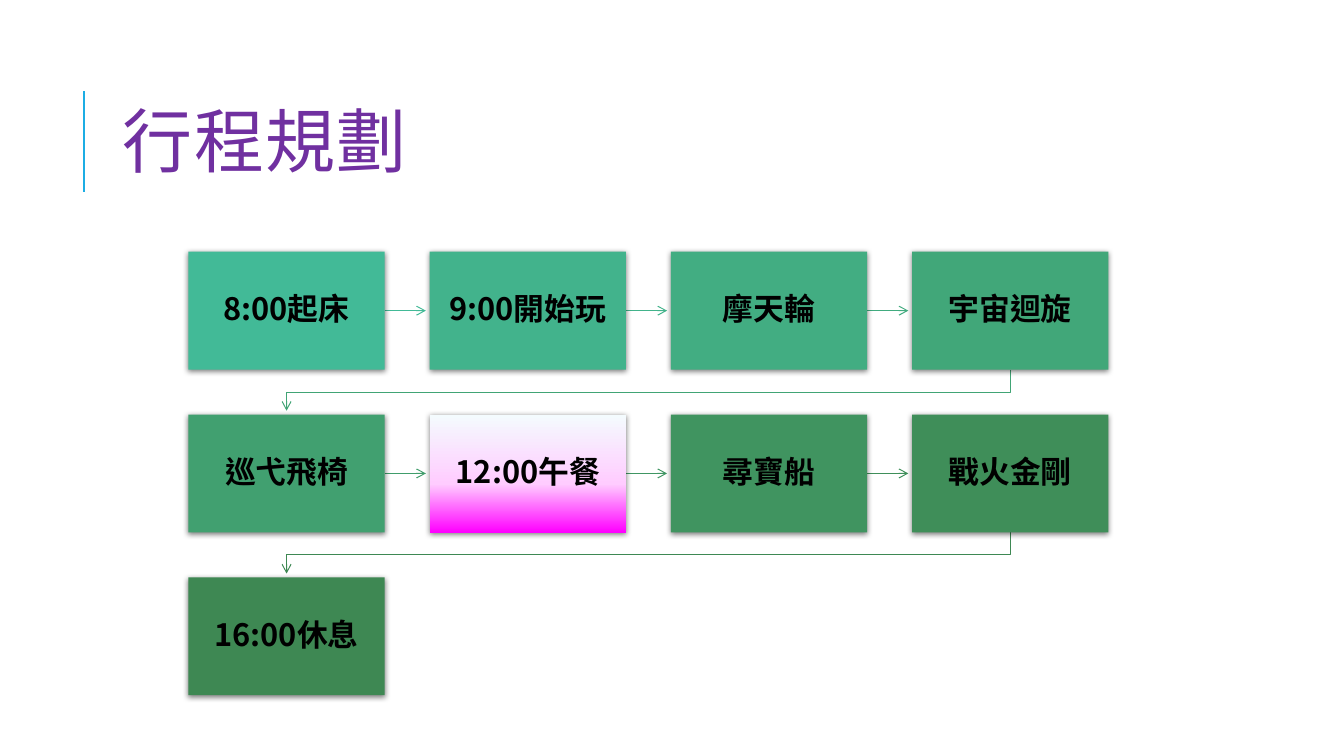
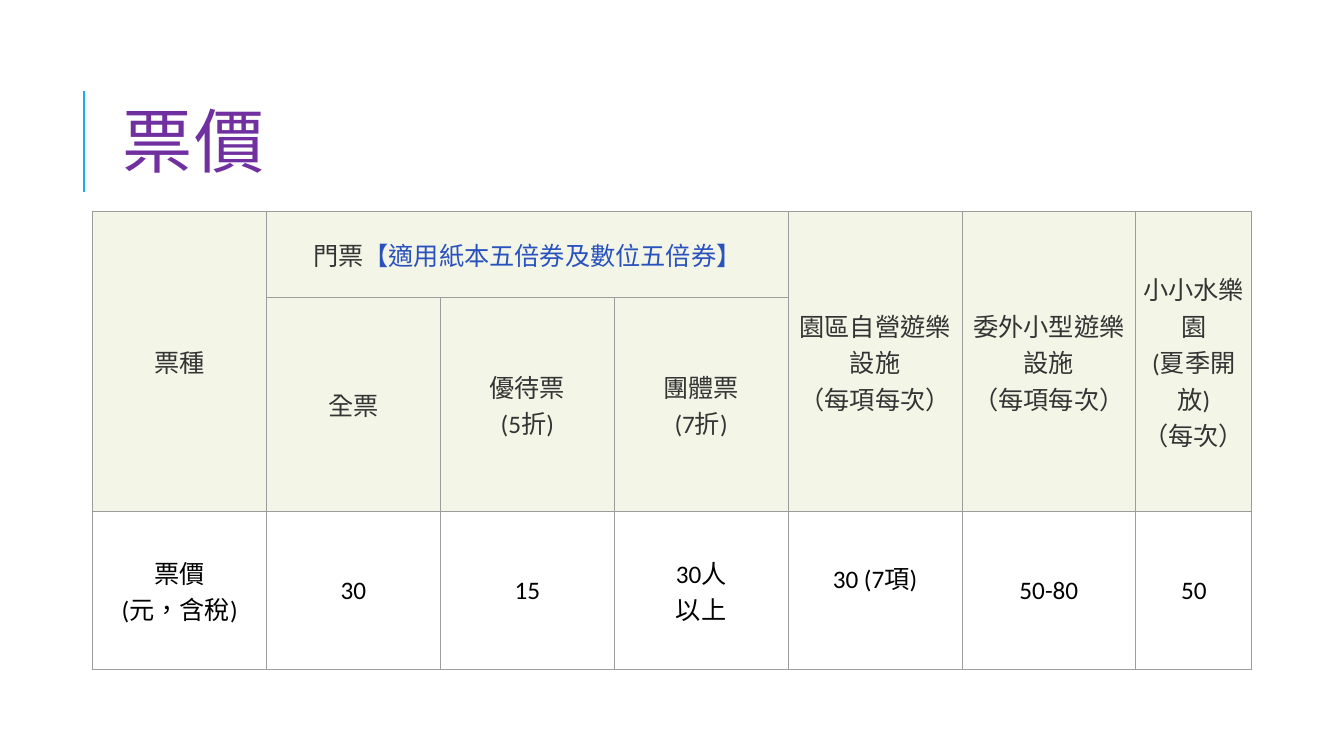
import copy

import pptx
import pptx.dml.color
import pptx.enum.shapes
import pptx.enum.text
import pptx.oxml.ns
import pptx.util
from lxml import etree

Pt = pptx.util.Pt
qn = pptx.oxml.ns.qn
PP_ALIGN = pptx.enum.text.PP_ALIGN
MIDDLE = pptx.enum.text.MSO_ANCHOR.MIDDLE


def rgb(color):
    return pptx.dml.color.RGBColor.from_string(color)


def sub(parent, tag, **attrs):
    """Append a DrawingML child element."""
    return etree.SubElement(parent, qn("a:" + tag), attrs)


class Deck:
    ACCENT, TITLE = "1CADE4", "7030A0"
    BLACK, GREY, BLUE = "000000", "343434", "2A52BE"
    HEAD, BODY, BORDER = "F3F6E7", "FFFFFF", "9C9C9C"
    TITLE_FONT, BOX_FONT, TABLE_FONT = "Cabin", "Noto Sans CJK SC", "Calibri"

    def __init__(self):
        self.prs = pptx.Presentation()
        self.prs.slide_width, self.prs.slide_height = Pt(960), Pt(540)
        self.s = None

    def slide(self, title):
        """Start a slide with the accent rule and its title."""
        self.s = self.prs.slides.add_slide(self.prs.slide_layouts[6])
        self.line((60, 137), (60, 65), self.ACCENT, 1.5)
        sp = self.s.shapes.add_textbox(Pt(80.6), Pt(46), Pt(765.4), Pt(118))
        tf = sp.text_frame
        tf.word_wrap = True
        tf.vertical_anchor = MIDDLE
        p = tf.paragraphs[0]
        p.line_spacing = 0.8
        r = self.run(p, title, 50, self.TITLE_FONT, self.TITLE)
        r._r.get_or_add_rPr().set("spc", "100")

    def run(self, p, text, size, font, color, bold=False):
        r = p.add_run()
        r.text = text
        r.font.size, r.font.name, r.font.bold = Pt(size), font, bold
        r.font.color.rgb = rgb(color)
        r._r.get_or_add_rPr().set("lang", "zh-TW")
        return r

    def line(self, start, end, color, width):
        c = self.s.shapes.add_connector(
            pptx.enum.shapes.MSO_CONNECTOR.STRAIGHT, *map(Pt, start + end))
        c.line.color.rgb, c.line.width = rgb(color), Pt(width)
        sub(c._element.spPr, "effectLst")
        return c

    def arrow(self, points, color):
        """Draw a straight arrow, or a bent one if there are over two points."""
        if len(points) == 2:
            sp = self.line(*points, color, 0.75)
        else:
            start, *rest = [tuple(map(Pt, point)) for point in points]
            fb = self.s.shapes.build_freeform(*start)
            fb.add_line_segments(rest, close=False)
            sp = fb.convert_to_shape()
            sp.fill.background()
            sp.line.color.rgb, sp.line.width = rgb(color), Pt(0.75)
            sp.shadow.inherit = False
        sub(sp._element.spPr.find(qn("a:ln")), "tailEnd", type="arrow")

    def box(self, x, y, w, h, text, fill):
        """Draw a shadowed box; fill is a colour or a list of gradient stops."""
        sp = self.s.shapes.add_shape(
            pptx.enum.shapes.MSO_SHAPE.RECTANGLE, *map(Pt, (x, y, w, h)))
        if isinstance(fill, str):
            sp.fill.solid()
            sp.fill.fore_color.rgb = rgb(fill)
        else:
            self.gradient(sp, fill)
        sp.line.fill.background()
        sp.shadow.inherit = False
        shadow = sub(sp._element.spPr.find(qn("a:effectLst")), "outerShdw",
                     blurRad=str(Pt(4)), dist=str(Pt(1)), dir="5400000",
                     rotWithShape="0")
        sub(sub(shadow, "srgbClr", val=self.BLACK), "alpha", val="50000")
        tf = sp.text_frame
        tf.word_wrap = True
        tf.vertical_anchor = MIDDLE
        tf.margin_left = tf.margin_right = Pt(12)
        tf.margin_top = tf.margin_bottom = Pt(12)
        p = tf.paragraphs[0]
        p.alignment, p.line_spacing = PP_ALIGN.CENTER, 0.9
        r = self.run(p, text, 22, self.BOX_FONT, self.BLACK, bold=True)
        sub(r._r.get_or_add_rPr(), "ea", typeface=self.BOX_FONT)

    def gradient(self, sp, stops):
        sp.fill.gradient()
        sp.fill.gradient_angle = 270
        gs = sp._element.spPr.find(".//" + qn("a:gsLst"))
        while len(gs) < len(stops):
            gs.insert(1, copy.deepcopy(gs[0]))
        for stop, (position, color) in zip(sp.fill.gradient_stops, stops):
            stop.position, stop.color.rgb = position, rgb(color)

    def table(self, x, y, widths, heights, rows, spans):
        """Fill a table; the last row is the body, the others are the head."""
        tbl = self.s.shapes.add_table(
            len(heights), len(widths), Pt(x), Pt(y),
            Pt(sum(widths)), Pt(sum(heights))).table
        tbl.first_row = tbl.horz_banding = False
        for col, width in zip(tbl.columns, widths):
            col.width = Pt(width)
        for row, height in zip(tbl.rows, heights):
            row.height = Pt(height)
        for i, row in enumerate(rows):
            head = i < len(rows) - 1
            for j, text in enumerate(row):
                self.cell(tbl.cell(i, j), text,
                          self.HEAD if head else self.BODY,
                          self.GREY if head else self.BLACK)
        for first, last in spans:
            tbl.cell(*first).merge(tbl.cell(*last))
        return tbl

    def cell(self, cell, text, fill, color):
        tcPr = cell._tc.get_or_add_tcPr()
        for side in ("lnL", "lnR", "lnT", "lnB"):
            ln = sub(tcPr, side, w=str(Pt(0.75)))
            sub(sub(ln, "solidFill"), "srgbClr", val=self.BORDER)
        cell.fill.solid()
        cell.fill.fore_color.rgb = rgb(fill)
        cell.vertical_anchor = MIDDLE
        cell.margin_left = cell.margin_right = Pt(2)
        cell.margin_top = cell.margin_bottom = Pt(2)
        if not text:
            return
        p = cell.text_frame.paragraphs[0]
        p.alignment = PP_ALIGN.CENTER
        for n, part in enumerate(text.split("\n")):
            if n:
                p.add_line_break()
            self.run(p, part, 18, self.TABLE_FONT, color)


def schedule(deck):
    lunch = [(0, "F4FBFE"), (0.59, "FFCCFF"), (1, "FF00FF")]
    steps = [  # text, fill, colour of the arrow to the next step
        ("8:00起床", "42BA97", "42BA97"),
        ("9:00開始玩", "42B38C", "42B38B"),
        ("摩天輪", "42AD82", "41AB7F"),
        ("宇宙迴旋", "41A779", "41A475"),
        ("巡弋飛椅", "41A070", "409D6B"),
        ("12:00午餐", lunch, "409663"),
        ("尋寶船", "409460", "3F8F5A"),
        ("戰火金剛", "3F8E59", "3E8853"),
        ("16:00休息", "3E8853", None),
    ]
    per_row, left, top, w, h = 4, 134.6, 179.8, 140.2, 84.2
    pitch_x, pitch_y, tip = 172.3, 116.3, 2.7

    deck.slide("行程規劃")
    for i, (text, fill, arrow) in enumerate(steps):
        row, col = divmod(i, per_row)
        x, y = left + col * pitch_x, top + row * pitch_y
        if arrow and col < per_row - 1:
            mid = y + h / 2
            deck.arrow([(x + w, mid), (x + pitch_x - tip, mid)], arrow)
        elif arrow:
            start, end = x + w / 2, left + w / 2
            turn = y + (h + pitch_y) / 2
            deck.arrow([(start, y + h), (start, turn), (end, turn),
                        (end, y + pitch_y - tip)], arrow)
        deck.box(x, y, w, h, text, fill)


def prices(deck):
    rows = [
        ["票種", "門票", "", "", "園區自營遊樂設施\n（每項每次）",
         "委外小型遊樂設施\n（每項每次）", "小小水樂園\n(夏季開放)\n（每次）"],
        ["", "全票", "優待票\n(5折)", "團體票\n(7折)", "", "", ""],
        ["票價\n(元，含稅)", "30", "15", "30人\n以上", "30 (7項)", "50-80", "50"],
    ]
    spans = [((0, 1), (0, 3))] + [((0, j), (1, j)) for j in (0, 4, 5, 6)]

    deck.slide("票價")
    tbl = deck.table(66.2, 151, [124.2] * 6 + [82.8], [61.7, 152.8, 112.6],
                     rows, spans)
    deck.run(tbl.cell(0, 1).text_frame.paragraphs[0],
             "【適用紙本五倍券及數位五倍券】", 18, deck.TABLE_FONT, deck.BLUE)
    tbl.cell(2, 4).margin_bottom = Pt(20)


def main():
    deck = Deck()
    schedule(deck)
    prices(deck)
    deck.prs.save("out.pptx")


if __name__ == "__main__":
    main()
